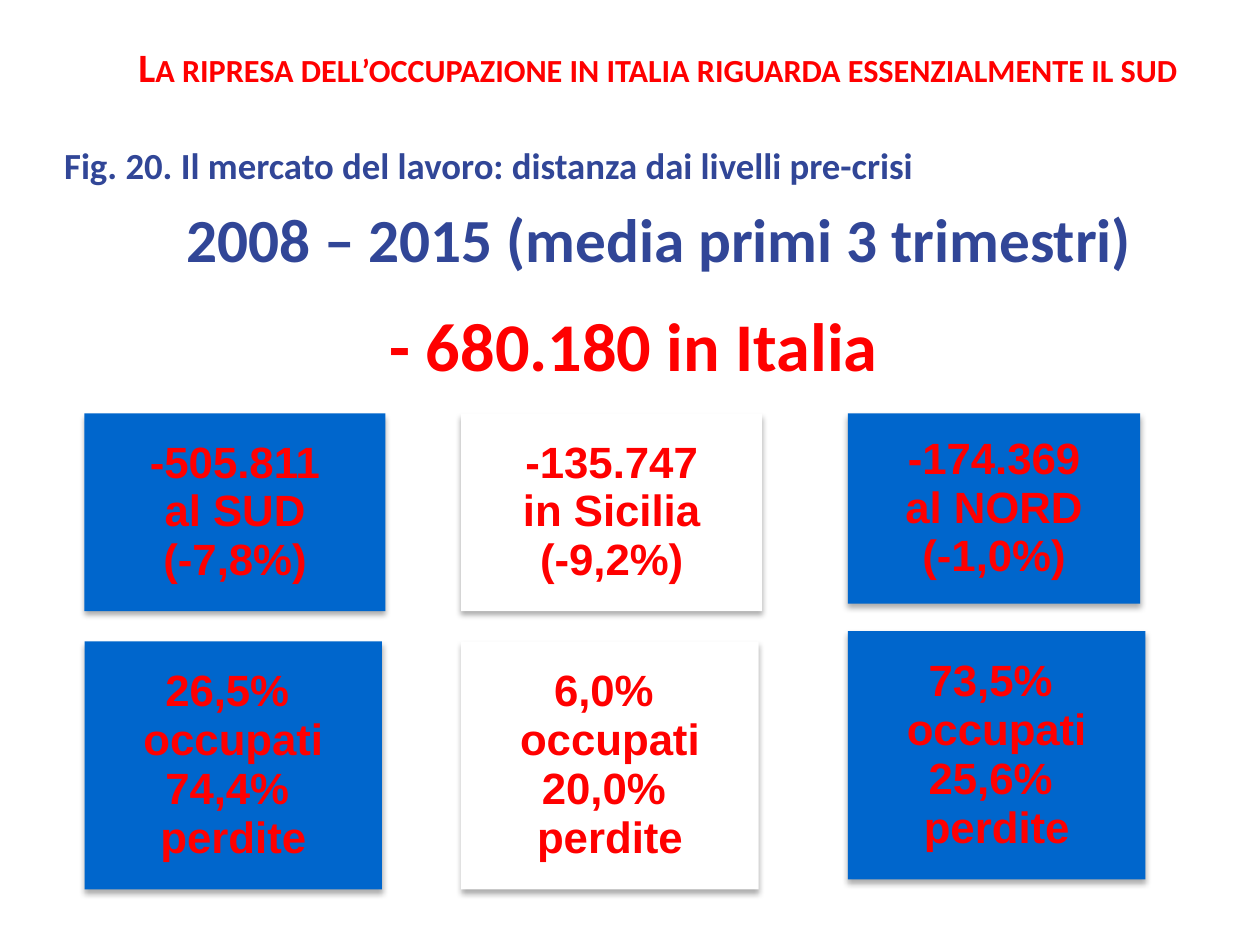
import pptx
import pptx.util
import pptx.dml.color
import pptx.enum.shapes
import pptx.enum.text
import pptx.oxml
import pptx.oxml.ns

Pt = pptx.util.Pt
RGBColor = pptx.dml.color.RGBColor
ALIGN = pptx.enum.text.PP_ALIGN

RED = RGBColor(0xFF, 0x00, 0x00)
INDIGO = RGBColor(0x31, 0x46, 0x97)
BLUE = RGBColor(0x00, 0x66, 0xCC)
WHITE = RGBColor(0xFF, 0xFF, 0xFF)

SHADOW = (
    f'<a:effectLst {pptx.oxml.ns.nsdecls("a")}>'
    '<a:outerShdw blurRad="44450" dist="27940" dir="5400000" algn="ctr" rotWithShape="0">'
    '<a:srgbClr val="000000"><a:alpha val="32000"/></a:srgbClr>'
    '</a:outerShdw></a:effectLst>'
)


def write_text(frame, lines, *, size, color, font="Calibri", align=ALIGN.CENTER,
               spacing=None, small_caps=False):
    frame.word_wrap = True
    frame.margin_left = frame.margin_right = Pt(6.5)
    frame.margin_top = frame.margin_bottom = Pt(3.2)
    for index, line in enumerate(lines):
        paragraph = frame.paragraphs[0] if index == 0 else frame.add_paragraph()
        paragraph.alignment = align
        if spacing:
            paragraph.line_spacing = spacing
        run = paragraph.add_run()
        run.text = line
        run.font.name = font
        run.font.size = Pt(size)
        run.font.bold = True
        run.font.color.rgb = color
        if small_caps:
            run._r.get_or_add_rPr().set("cap", "small")


class EmploymentSlide:
    def __init__(self, slide):
        self.slide = slide

    def heading(self, text, left, top, width, height, **style):
        box = self.slide.shapes.add_textbox(Pt(left), Pt(top), Pt(width), Pt(height))
        write_text(box.text_frame, [text], **style)

    def card(self, lines, left, top, width, height, fill):
        """Draw a shadowed rectangle with centred figures."""
        card = self.slide.shapes.add_shape(
            pptx.enum.shapes.MSO_SHAPE.RECTANGLE, Pt(left), Pt(top), Pt(width), Pt(height))
        card.fill.solid()
        card.fill.fore_color.rgb = fill
        card.line.fill.background()
        card._element.spPr.append(pptx.oxml.parse_xml(SHADOW))
        card.text_frame.vertical_anchor = pptx.enum.text.MSO_ANCHOR.MIDDLE
        write_text(card.text_frame, lines, size=25, color=RED, font="Arial", spacing=0.93)


def main():
    deck = pptx.Presentation()
    deck.slide_width, deck.slide_height = Pt(720), Pt(540)
    page = EmploymentSlide(deck.slides.add_slide(deck.slide_layouts[6]))

    page.heading("La ripresa dell’occupazione in italia riguarda essenzialmente il sud",
                 65.5, 21, 620.6, 34.6, size=23, color=RED, small_caps=True)
    page.heading("Fig. 20. Il mercato del lavoro: distanza dai livelli pre-crisi",
                 30.2, 80, 669, 31, size=21, color=INDIGO, align=ALIGN.LEFT, spacing=0.97)
    page.heading("2008 – 2015 (media primi 3 trimestri)",
                 76.3, 111.6, 601, 49, size=35, color=INDIGO)
    page.heading("- 680.180 in Italia", 98, 170, 528.5, 53.3, size=39, color=RED)

    # left, fill, loss width and height, share top, area, loss, share of jobs, share of losses
    areas = [
        (48.3, BLUE, 172, 113, 366.5, "al SUD", "-505.811", "(-7,8%)", "26,5% ", "74,4% "),
        (263.5, WHITE, 172, 113, 366.5, "in Sicilia", "-135.747", "(-9,2%)", "6,0% ", "20,0% "),
        (484.5, BLUE, 167, 108.7, 360.7, "al NORD", "-174.369", "(-1,0%)", "73,5% ", "25,6% "),
    ]
    for left, fill, width, height, share_top, area, loss, change, jobs, losses in areas:
        page.card([loss, area, change], left, 236.2, width, height, fill)
        page.card([jobs, "occupati", losses, "perdite"], left, share_top, 170, 141.8, fill)

    deck.save("out.pptx")


if __name__ == "__main__":
    main()
